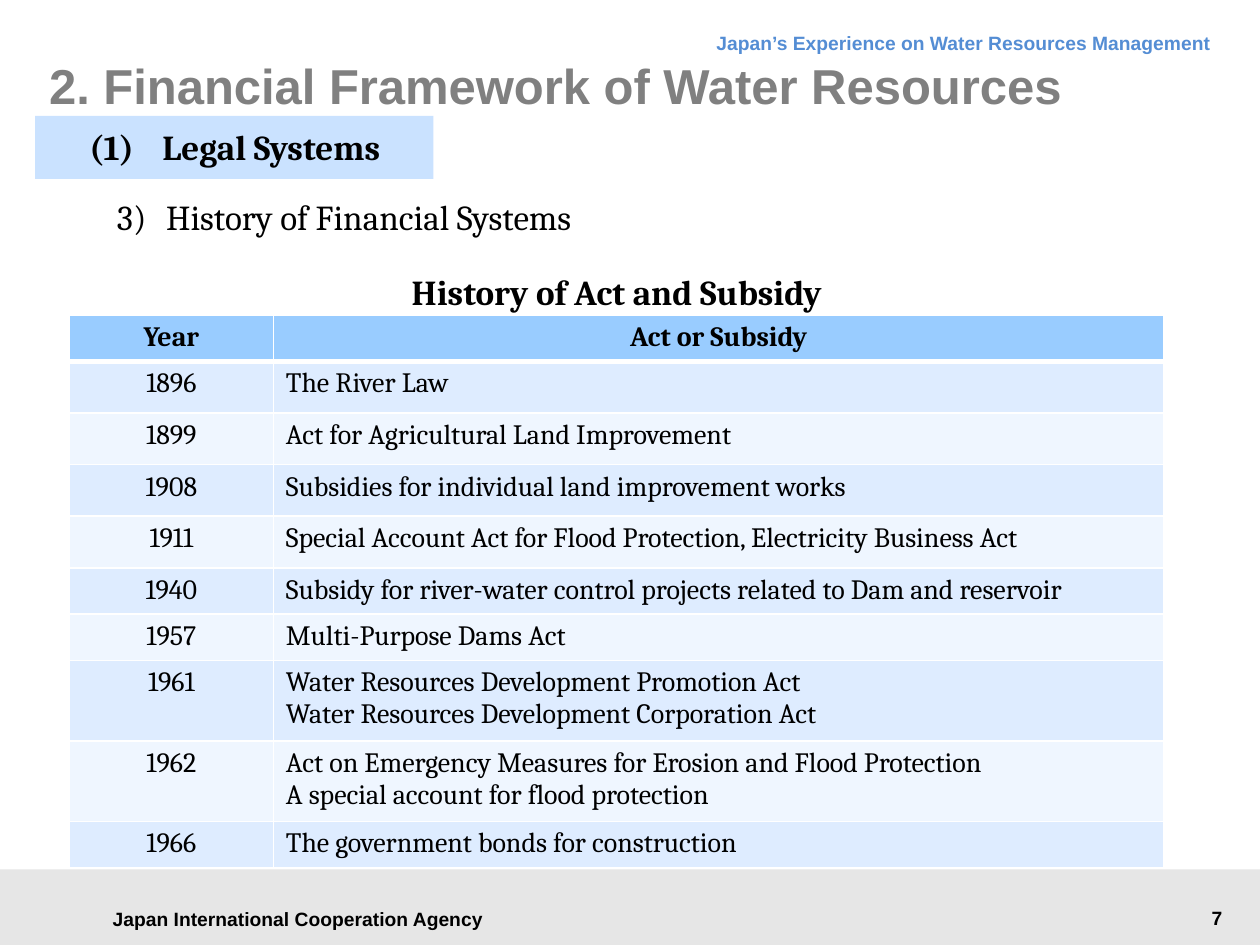
from lxml import etree
from pptx import Presentation
from pptx import util as u
from pptx.dml.color import RGBColor
from pptx.enum import shapes, text
from pptx.oxml.ns import qn

LEFT, CENTER, RIGHT = text.PP_ALIGN.LEFT, text.PP_ALIGN.CENTER, text.PP_ALIGN.RIGHT
TOP, MIDDLE = text.MSO_ANCHOR.TOP, text.MSO_ANCHOR.MIDDLE
DEFAULT_INSETS = (0.1, 0.05, 0.1, 0.05)

# Year, acts or subsidies, row height
HISTORY = [
    ("1896", "The River Law", 0.41),
    ("1899", "Act for Agricultural Land Improvement", 0.41),
    ("1908", "Subsidies for individual land improvement works", 0.41),
    ("1911", "Special Account Act for Flood Protection, Electricity Business Act", 0.41),
    ("1940", "Subsidy for river-water control projects related to Dam and reservoir", 0.36),
    ("1957", "Multi-Purpose Dams Act", 0.36),
    ("1961", "Water Resources Development Promotion Act\n"
             "Water Resources Development Corporation Act", 0.64),
    ("1962", "Act on Emergency Measures for Erosion and Flood Protection\n"
             "A special account for flood protection", 0.64),
    ("1966", "The government bonds for construction", 0.36),
]


def color(hex_string):
    return RGBColor.from_string(hex_string)


class SlideBuilder:
    heading_font = "Arial"
    body_font = "Cambria"
    header_fill = "99CCFF"
    band_fills = ("DEECFF", "EFF6FF")
    border = "FFFFFF"

    def __init__(self, slide):
        self.slide = slide

    def set_text(self, frame, words, size, font, ink="000000", bold=False, align=LEFT,
                 hanging=0, line_spacing=None):
        """Fill a text frame, one paragraph per line of words."""
        frame.text = words
        for paragraph in frame.paragraphs:
            paragraph.alignment = align
            if line_spacing:
                paragraph.line_spacing = u.Pt(line_spacing)
            if hanging:
                properties = paragraph._p.get_or_add_pPr()
                properties.set("marL", str(u.Inches(hanging)))
                properties.set("indent", str(-u.Inches(hanging)))
            style = paragraph.font
            style.name, style.size, style.bold = font, u.Pt(size), bold
            style.color.rgb = color(ink)

    def frame(self, shape, insets=DEFAULT_INSETS, anchor=TOP, wrap=True, grow=False):
        frame = shape.text_frame
        (frame.margin_left, frame.margin_top,
         frame.margin_right, frame.margin_bottom) = map(u.Inches, insets)
        frame.vertical_anchor = anchor
        frame.word_wrap = wrap
        frame.auto_size = (text.MSO_AUTO_SIZE.SHAPE_TO_FIT_TEXT if grow
                           else text.MSO_AUTO_SIZE.NONE)
        return frame

    def label(self, place, words, size, font, insets=DEFAULT_INSETS, anchor=TOP,
              grow=False, **style):
        box = self.slide.shapes.add_textbox(*map(u.Inches, place))
        self.set_text(self.frame(box, insets, anchor, grow=grow), words, size, font, **style)

    def band(self, place, fill):
        rectangle = self.slide.shapes.add_shape(
            shapes.MSO_SHAPE.RECTANGLE, *map(u.Inches, place))
        rectangle.shadow.inherit = False
        rectangle.fill.solid()
        rectangle.fill.fore_color.rgb = color(fill)
        rectangle.line.fill.background()
        return rectangle

    def section(self, place, words, fill):
        frame = self.frame(self.band(place, fill), (0.43, 0.08, 0.35, 0.08),
                           wrap=False, grow=True)
        self.set_text(frame, words, 20, self.body_font, bold=True, hanging=0.58)

    def cell(self, cell, words, fill, header=False, align=LEFT):
        properties = cell._tc.get_or_add_tcPr()
        for side in "LRTB":
            width = 3 if header and side == "B" else 1
            line = etree.SubElement(properties, qn(f"a:ln{side}"), w=str(u.Pt(width)))
            paint = etree.SubElement(line, qn("a:solidFill"))
            etree.SubElement(paint, qn("a:srgbClr"), val=self.border)
        cell.fill.solid()
        cell.fill.fore_color.rgb = color(fill)
        self.set_text(cell.text_frame, words, 16, self.body_font, bold=header, align=align)

    def table(self, left, top, widths, headings, header_height, entries):
        heights = [header_height] + [height for *_, height in entries]
        place = (left, top, sum(widths), sum(heights))
        table = self.slide.shapes.add_table(
            len(heights), len(widths), *map(u.Inches, place)).table
        for column, width in zip(table.columns, widths):
            column.width = u.Inches(width)
        for row, height in zip(table.rows, heights):
            row.height = u.Inches(height)
        for column, heading in enumerate(headings):
            self.cell(table.cell(0, column), heading, self.header_fill, True, CENTER)
        for number, (year, acts, _) in enumerate(entries, 1):
            fill = self.band_fills[(number - 1) % 2]
            self.cell(table.cell(number, 0), year, fill, align=CENTER)
            self.cell(table.cell(number, 1), acts, fill)


def main():
    deck = Presentation()
    deck.slide_width, deck.slide_height = u.Inches(10), u.Inches(7.5)
    page = SlideBuilder(deck.slides.add_slide(deck.slide_layouts[6]))
    arial, cambria = page.heading_font, page.body_font

    page.band((0, 6.9, 10, 0.6), "E6E6E6")
    page.label((0.71, 7.12, 3.31, 0.34), "Japan International Cooperation Agency", 11, arial,
               anchor=MIDDLE, bold=True, align=CENTER)
    page.label((2.72, 0.13, 6.99, 0.38), "Japan’s Experience on Water Resources Management",
               11, arial, ink="548DD4", bold=True, align=RIGHT, line_spacing=18)
    page.label((8.23, 7.14, 1.57, 0.29), "7", 11, arial, grow=True, bold=True, align=RIGHT)

    page.label((0.39, 0.28, 9, 0.79), "2. Financial Framework of Water Resources", 28, arial,
               insets=(0, 0, 0, 0), anchor=MIDDLE, ink="808080", bold=True)
    page.label((0.83, 1.5, 8.69, 0.44), "3)\tHistory of Financial Systems", 20, cambria,
               grow=True, hanging=0.39)
    page.table(0.55, 2.5, (1.62, 7.07), ("Year", "Act or Subsidy"), 0.36, HISTORY)
    page.label((2.45, 2.26, 4.89, 0.23), "History of Act and Subsidy", 20, cambria,
               insets=(0, 0, 0, 0), grow=True, bold=True, align=CENTER, line_spacing=16)
    page.section((0.28, 0.92, 3.16, 0.5), "(1)\tLegal Systems", "CAE2FF")

    deck.save("out.pptx")


if __name__ == "__main__":
    main()
